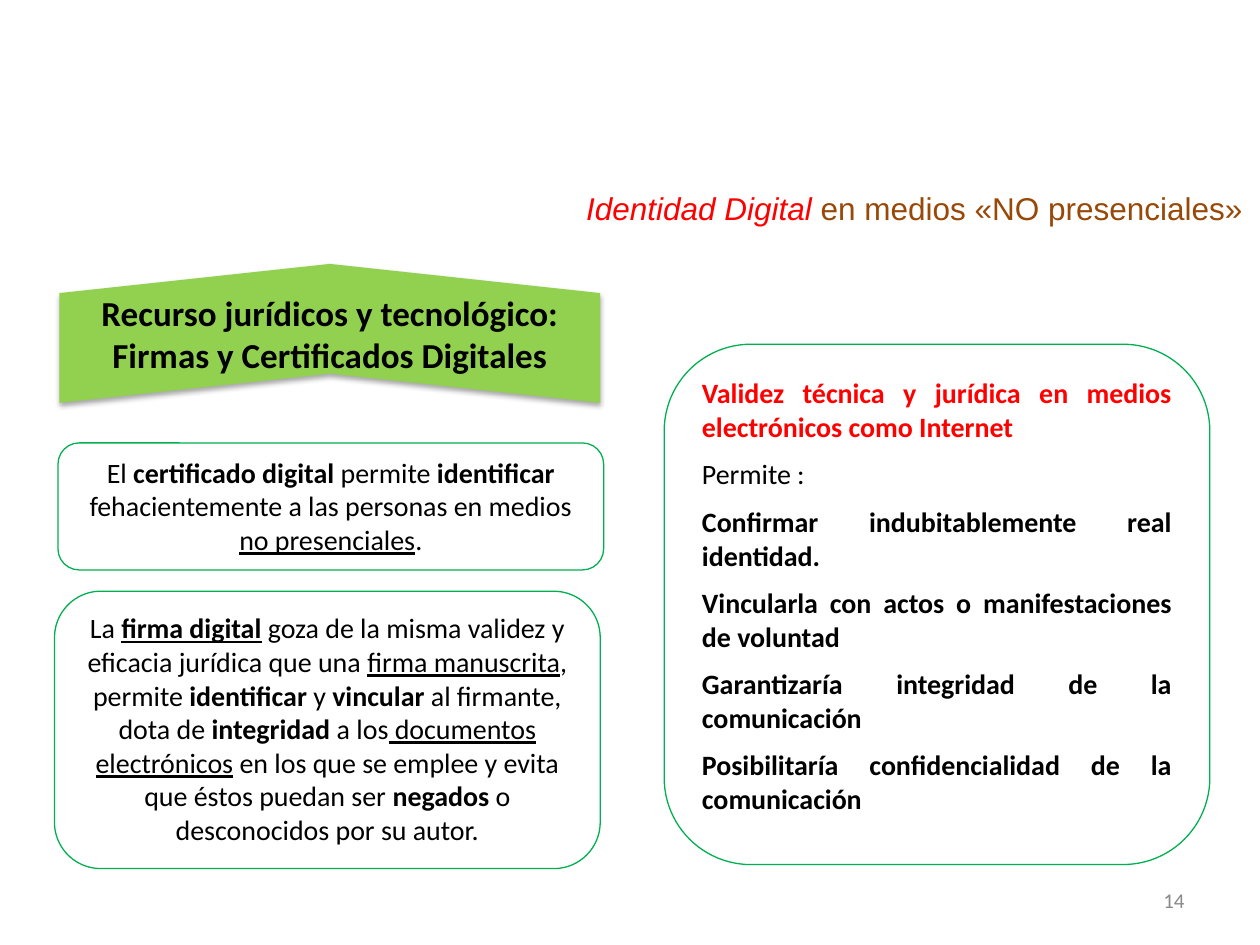
from lxml import etree
from pptx import Presentation
from pptx import util as u
from pptx.dml.color import RGBColor
from pptx.enum import shapes, text
from pptx.oxml.ns import qn

BLACK, RED, GREEN = "000000", "FF0000", "00B050"
PANEL_WIDTH = 11
CENTER, JUSTIFY, RIGHT = (text.PP_ALIGN.CENTER, text.PP_ALIGN.JUSTIFY,
                          text.PP_ALIGN.RIGHT)


def color(hex_code):
    return RGBColor.from_string(hex_code)


def write(frame, paragraphs, size=16, font="Calibri", align=CENTER,
          anchor=text.MSO_ANCHOR.TOP, gap=8):
    """Fill a frame; a paragraph is a list of (text, style letters, colour)."""
    frame.word_wrap = True
    frame.vertical_anchor = anchor
    for index, runs in enumerate(paragraphs):
        paragraph = frame.add_paragraph() if index else frame.paragraphs[0]
        paragraph.alignment = align
        if index:
            paragraph.space_before = u.Pt(gap)
        for wording, style, ink in runs:
            run = paragraph.add_run()
            run.text = wording
            run.font.name, run.font.size = font, u.Pt(size)
            run.font.bold = "b" in style
            run.font.italic = "i" in style
            run.font.underline = "u" in style
            run.font.color.rgb = color(ink)


def add_label(slide, left, top, width, height, runs, **form):
    box = slide.shapes.add_textbox(*map(u.Cm, (left, top, width, height)))
    write(box.text_frame, [runs], align=RIGHT, **form)


def add_panel(slide, left, top, height, paragraphs, **form):
    panel = slide.shapes.add_shape(
        shapes.MSO_SHAPE.ROUNDED_RECTANGLE,
        *map(u.Cm, (left, top, PANEL_WIDTH, height)))
    panel.shadow.inherit = False
    panel.fill.background()
    panel.line.color.rgb = color(GREEN)
    panel.line.width = u.Pt(0.75)
    write(panel.text_frame, paragraphs, **form)


def add_banner(slide, left, top, width, height, wording):
    # A chevron turned upwards, with its text turned back to horizontal
    banner = slide.shapes.add_shape(
        shapes.MSO_SHAPE.CHEVRON,
        *map(u.Cm, (left + (width - height) / 2, top - (width - height) / 2,
                    height, width)))
    banner.rotation = 270
    banner.adjustments[0] = 0.21
    banner.fill.solid()
    banner.fill.fore_color.rgb = color("92D050")
    banner.line.fill.background()
    write(banner.text_frame, [[(wording, "b", BLACK)]], size=20,
          anchor=text.MSO_ANCHOR.MIDDLE)
    banner.text_frame._txBody.bodyPr.set("vert", "vert")

    # Soft shadow below
    banner.shadow.inherit = False
    effects = banner._element.spPr.find(qn("a:effectLst"))
    shadow = etree.SubElement(
        effects, qn("a:outerShdw"), blurRad=str(u.Pt(3.1)),
        dist=str(u.Pt(1.8)), dir="5400000", rotWithShape="0")
    ink = etree.SubElement(shadow, qn("a:srgbClr"), val=BLACK)
    etree.SubElement(ink, qn("a:alpha"), val="35000")


def black_runs(*parts):
    return [(wording, style, BLACK) for wording, style in parts]


def main():
    deck = Presentation()
    deck.slide_width, deck.slide_height = u.Cm(25.4), u.Cm(19.05)
    slide = deck.slides.add_slide(deck.slide_layouts[6])

    # Slide number
    add_label(slide, 18.2, 17.65, 5.93, 1.01, [("14", "", "898989")],
              size=12, anchor=text.MSO_ANCHOR.MIDDLE)

    # Left column: resource banner, signature and certificate
    add_banner(slide, 1.2, 5.32, 10.9, 2.8,
               "Recurso jurídicos y tecnológico: "
               "Firmas y Certificados Digitales")
    signature = black_runs(
        ("La ", ""), ("firma digital", "bu"),
        (" goza de la misma validez y eficacia jurídica que una ", ""),
        ("firma manuscrita", "u"), (", permite ", ""),
        ("identificar", "b"), (" y ", ""), ("vincular", "b"),
        (" al firmante, dota de ", ""), ("integridad", "b"),
        (" a los", ""), (" documentos electrónicos", "u"),
        (" en los que se emplee y evita que éstos puedan ser ", ""),
        ("negados", "b"), (" o desconocidos por su autor.", ""))
    add_panel(slide, 1.1, 11.92, 5.59, [signature])
    certificate = black_runs(
        ("El ", ""), ("certificado digital", "b"), (" permite ", ""),
        ("identificar", "b"),
        (" fehacientemente a las personas en medios ", ""),
        ("no presenciales", "u"), (".", ""))
    add_panel(slide, 1.17, 8.93, 2.56, [certificate])

    # Right column: what validity allows
    benefits = ["Confirmar indubitablemente real identidad.",
                "Vincularla con actos o manifestaciones de voluntad",
                "Garantizaría integridad de la comunicación",
                "Posibilitaría confidencialidad de la comunicación"]
    validity = [("Validez técnica y jurídica en medios electrónicos "
                 "como Internet ", "b", RED)]
    add_panel(slide, 13.39, 6.94, 10.49,
              [validity, black_runs(("Permite :", ""))]
              + [black_runs((benefit, "b")) for benefit in benefits],
              align=JUSTIFY)

    # Heading
    add_label(slide, 0.3, 3.68, 25, 1.8,
              [("Identidad Digital ", "i", RED),
               ("en medios «NO presenciales»", "", "984807")],
              size=18, font="Arial")

    deck.save("out.pptx")


if __name__ == "__main__":
    main()
